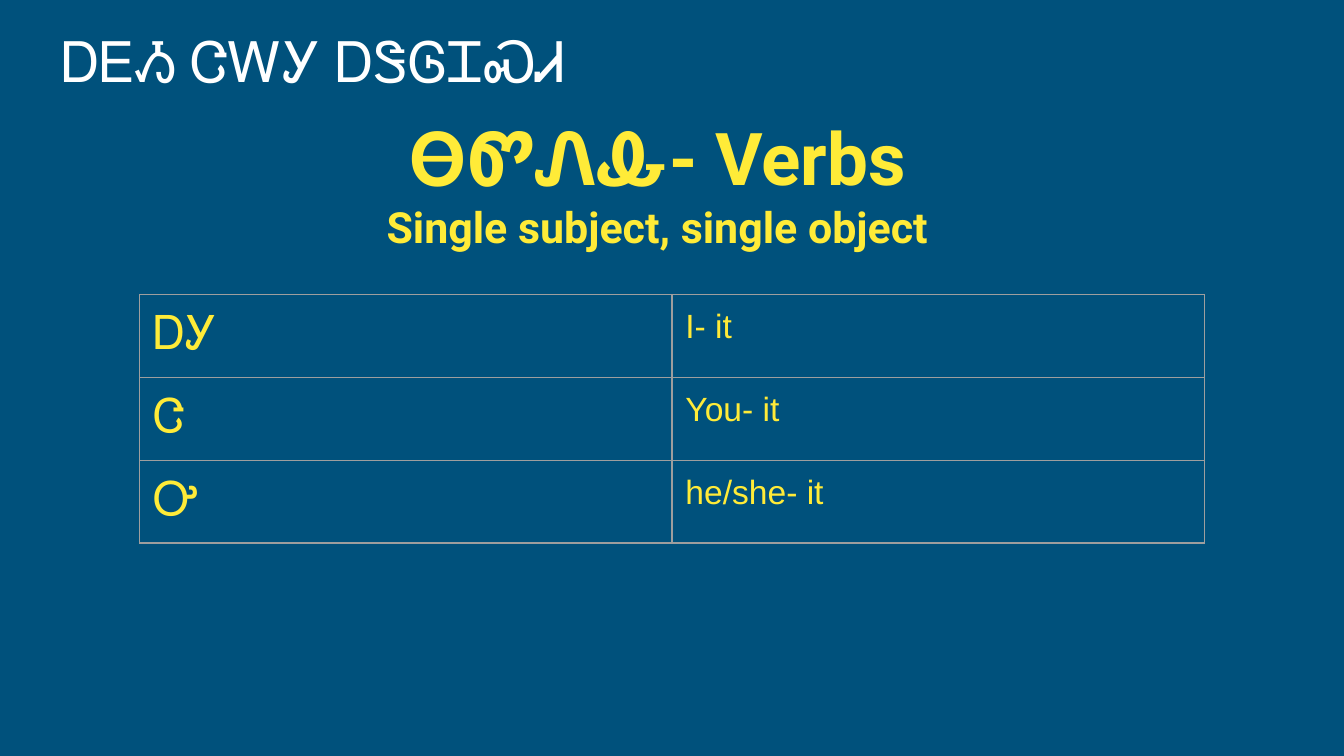
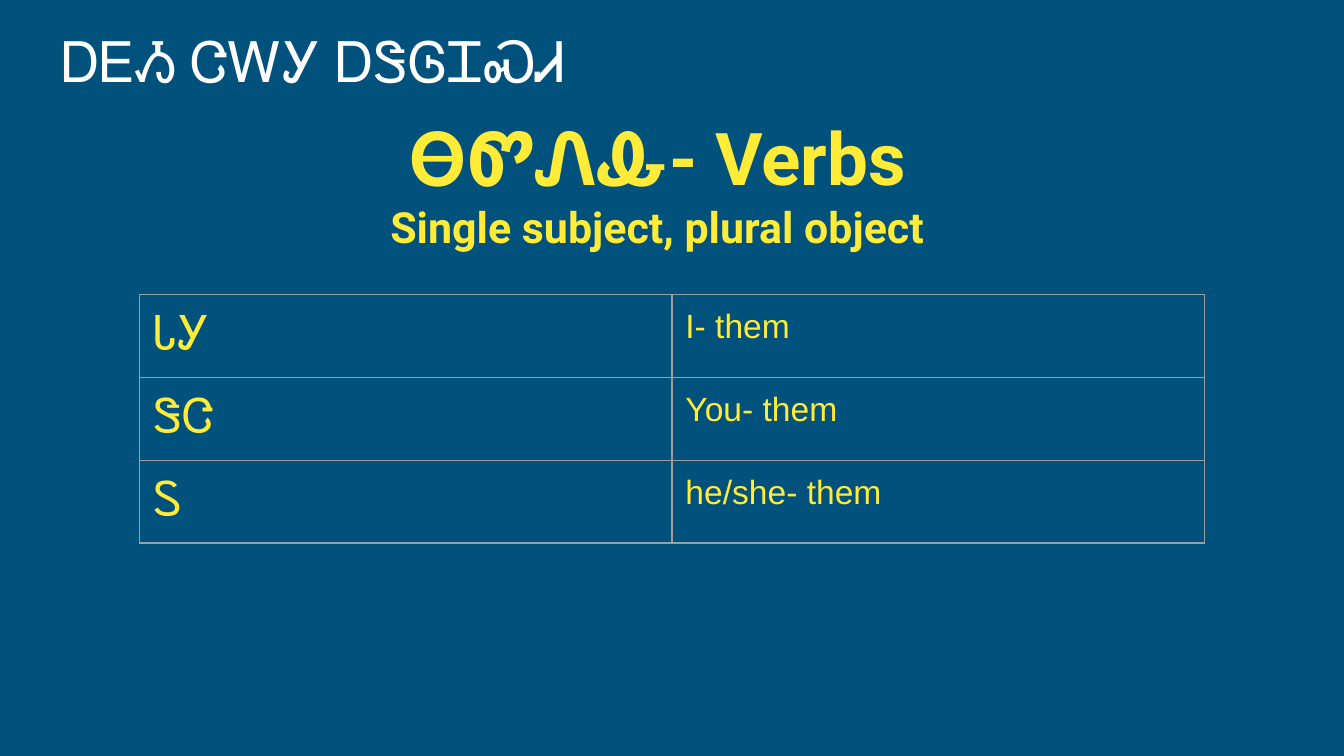
from lxml import etree
from pptx import Presentation
from pptx.dml.color import RGBColor
from pptx.enum.text import MSO_ANCHOR, MSO_AUTO_SIZE, PP_ALIGN
from pptx.oxml.ns import qn
from pptx.util import Inches, Pt

BOTTOM = MSO_ANCHOR.BOTTOM
NO_AUTOFIT = MSO_AUTO_SIZE.NONE
LEFT, CENTER = PP_ALIGN.LEFT, PP_ALIGN.CENTER

NAVY, WHITE, YELLOW, GREY = "00517C", "FFFFFF", "FFEB38", "9E9E9E"
TITLE_ONLY = 5
INSET = Inches(0.1)
TITLE_BOX = (0.36, 0.05, 9.15, 0.75)
HEADING_BOX = (2.51, 0.74, 4.77, 1.25)
TABLE_BOX = (1.04, 2.19, 7.92, 1.85)

LESSON_TITLE = "ᎠᎬᏱ ᏣᎳᎩ ᎠᏕᎶᏆᏍᏗ"
VERB_HEADING = "ᎾᏛᏁᎲ- Verbs"
VERB_SLIDES = [
    ("Single subject, single object",
     [("ᎠᎩ", "I- it"), ("Ꮳ", "You- it"), ("Ꭴ", "he/she- it")]),
    ("Single subject, plural object",
     [("ᏓᎩ", "I- them"), ("ᏕᏣ", "You- them"), ("Ꮪ", "he/she- them")]),
]


def rgb(value):
    """Turn a hex string into a colour."""
    return RGBColor.from_string(value)


def style_paragraph(paragraph, font_name, size, color, bold=False, align=LEFT):
    """Format the runs of a paragraph, covering Latin and Cherokee script."""
    paragraph.alignment = align
    for run in paragraph.runs:
        font = run.font
        font.size, font.bold, font.name = Pt(size), bold, font_name
        font.color.rgb = rgb(color)
        for script in ("a:ea", "a:cs"):
            etree.SubElement(run._r.get_or_add_rPr(), qn(script), typeface=font_name)


def set_insets(frame):
    """Give a text frame or a table cell equal margins."""
    frame.margin_left = frame.margin_right = INSET
    frame.margin_top = frame.margin_bottom = INSET


def add_title(slide, box):
    """Place the lesson title in the title placeholder."""
    title = slide.shapes.title
    title.left, title.top, title.width, title.height = map(Inches, box)
    frame = title.text_frame
    frame.text = LESSON_TITLE
    frame.auto_size = NO_AUTOFIT
    frame.vertical_anchor = BOTTOM
    set_insets(frame)
    style_paragraph(frame.paragraphs[0], "Roboto Slab", 30, WHITE)


def add_heading(slide, box, subheading):
    """Add the centred verb heading with its subheading."""
    frame = slide.shapes.add_textbox(*map(Inches, box)).text_frame
    frame.word_wrap = True
    set_insets(frame)
    frame.text = f"{VERB_HEADING}\n{subheading}"
    for paragraph, size in zip(frame.paragraphs, (39, 23)):
        style_paragraph(paragraph, "Roboto", size, YELLOW, True, CENTER)


def add_borders(cell):
    """Draw a thin grey line on each side of a cell."""
    properties = cell._tc.get_or_add_tcPr()
    for side in ("a:lnL", "a:lnR", "a:lnT", "a:lnB"):
        line = etree.SubElement(properties, qn(side), w=str(Pt(0.75)))
        fill = etree.SubElement(line, qn("a:solidFill"))
        etree.SubElement(fill, qn("a:srgbClr"), val=GREY)


def add_prefix_table(slide, box, prefixes):
    """Add the table of pronoun prefixes and their meanings."""
    table = slide.shapes.add_table(len(prefixes), 2, *map(Inches, box)).table
    table.first_row = table.horz_banding = False
    for row, entry in zip(table.rows, prefixes):
        for cell, text, size in zip(row.cells, entry, (25, 18)):
            add_borders(cell)
            cell.fill.background()
            set_insets(cell)
            cell.text = text
            style_paragraph(cell.text_frame.paragraphs[0], "Arial", size, YELLOW)


def add_verb_slide(deck, subheading, prefixes):
    """Build one slide of verb prefixes."""
    slide = deck.slides.add_slide(deck.slide_layouts[TITLE_ONLY])
    background = slide.background.fill
    background.solid()
    background.fore_color.rgb = rgb(NAVY)
    add_title(slide, TITLE_BOX)
    add_heading(slide, HEADING_BOX, subheading)
    add_prefix_table(slide, TABLE_BOX, prefixes)


def main():
    """Build and save the widescreen deck."""
    deck = Presentation()
    deck.slide_width = Inches(10)
    deck.slide_height = deck.slide_width * 9 // 16
    for subheading, prefixes in VERB_SLIDES:
        add_verb_slide(deck, subheading, prefixes)
    deck.save("out.pptx")


if __name__ == "__main__":
    main()
